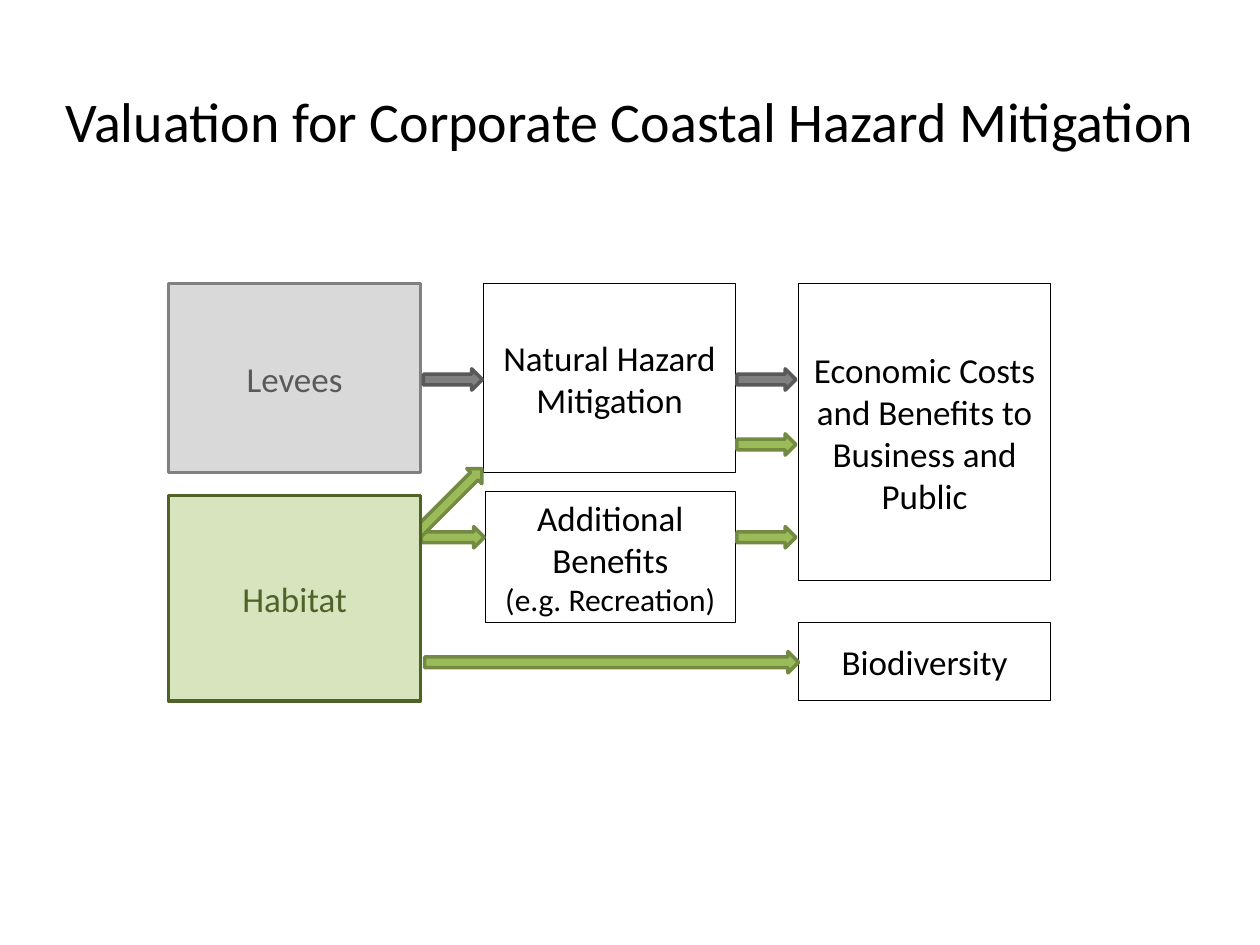
from pptx import Presentation
from pptx.dml.color import RGBColor
from pptx.enum.shapes import MSO_SHAPE
from pptx.enum.text import MSO_ANCHOR, PP_ALIGN
from pptx.util import Cm, Pt

COLORS = {
    "black": "000000",
    "levee_fill": "D9D9D9", "levee_line": "808080", "levee_text": "595959",
    "habitat_fill": "D7E4BD", "habitat_dark": "4F6228",
    "grey_arrow": "808080", "grey_edge": "595959",
    "green_arrow": "9BBB59", "green_edge": "738A42",
}
FONT = "Calibri"
ARROW_THICKNESS = 0.43
RIGHT, UP_RIGHT = 270, 225  # turns of a down arrow


def rgb(name):
    return RGBColor.from_string(COLORS[name])


def write(frame, lines, color):
    """Fill a frame with centred (text, size) lines."""
    frame.word_wrap = True
    frame.vertical_anchor = MSO_ANCHOR.MIDDLE
    for number, (text, size) in enumerate(lines):
        paragraph = frame.paragraphs[0] if number == 0 else frame.add_paragraph()
        paragraph.text = text
        paragraph.alignment = PP_ALIGN.CENTER
        font = paragraph.runs[0].font
        font.name, font.size = FONT, Pt(size)
        font.color.rgb = rgb(color)


def paint(shape, fill, line, weight):
    shape.shadow.inherit = False
    if fill:
        shape.fill.solid()
        shape.fill.fore_color.rgb = rgb(fill)
    else:
        shape.fill.background()
    shape.line.color.rgb = rgb(line)
    shape.line.width = Pt(weight)


def add_box(slide, left, top, width, height, lines,
            fill=None, line="black", weight=0.5, color="black"):
    box = slide.shapes.add_shape(
        MSO_SHAPE.RECTANGLE, Cm(left), Cm(top), Cm(width), Cm(height))
    paint(box, fill, line, weight)
    write(box.text_frame, lines, color)


def add_arrow(slide, center_x, center_y, length, tone, turn=RIGHT):
    arrow = slide.shapes.add_shape(
        MSO_SHAPE.DOWN_ARROW,
        Cm(center_x - ARROW_THICKNESS / 2), Cm(center_y - length / 2),
        Cm(ARROW_THICKNESS), Cm(length))
    arrow.rotation = turn
    paint(arrow, f"{tone}_arrow", f"{tone}_edge", 2)


def add_title(slide, left, top, width, height):
    title = slide.shapes.title
    title.left, title.top = Cm(left), Cm(top)
    title.width, title.height = Cm(width), Cm(height)
    write(title.text_frame,
          [("Valuation for Corporate Coastal Hazard Mitigation", 32)], "black")


def add_flow(slide, left, top, width, height):
    column = 5.08
    middle = left + (width - column) / 2
    outcome = left + width - column
    gap = 1.19
    first_gap, second_gap = left + 5.73, left + 12.05

    # Outcomes and the levee source
    add_box(slide, middle, top, column, 3.81, [("Natural Hazard Mitigation", 20)])
    add_box(slide, outcome, top, column, 5.99,
            [("Economic Costs and Benefits to Business and Public", 20)])
    add_box(slide, left, top, column, 3.81, [("Levees", 20)],
            "levee_fill", "levee_line", 2, "levee_text")
    add_box(slide, middle + 0.04, top + 4.19, 5.03, 2.64,
            [("Additional Benefits", 20), ("(e.g. Recreation)", 18)])
    add_box(slide, outcome, top + 6.83, column, height - 6.83,
            [("Biodiversity", 20)])

    # Levee path
    for center_x in (first_gap, second_gap):
        add_arrow(slide, center_x, top + 1.93, gap, "grey")

    # Habitat paths
    add_arrow(slide, left + 8.93, top + 7.63, 7.54, "green")
    add_arrow(slide, first_gap, top + 5.11, 1.27, "green")
    add_arrow(slide, left + 5.66, top + 4.38, 1.85, "green", UP_RIGHT)
    for center_y in (3.24, 5.11):
        add_arrow(slide, second_gap, top + center_y, gap, "green")

    # Habitat source covers the arrow tails
    add_box(slide, left, top + 4.27, column, height - 4.27, [("Habitat", 20)],
            "habitat_fill", "habitat_dark", 2, "habitat_dark")


def main():
    deck = Presentation()
    deck.slide_width, deck.slide_height = Cm(25.4), Cm(19.05)
    slide = deck.slides.add_slide(deck.slide_layouts[5])
    add_title(slide, 0, 0.84, 25.4, 3.18)
    add_flow(slide, 3.4, 5.72, 17.78, 8.41)
    deck.save("out.pptx")


if __name__ == "__main__":
    main()
